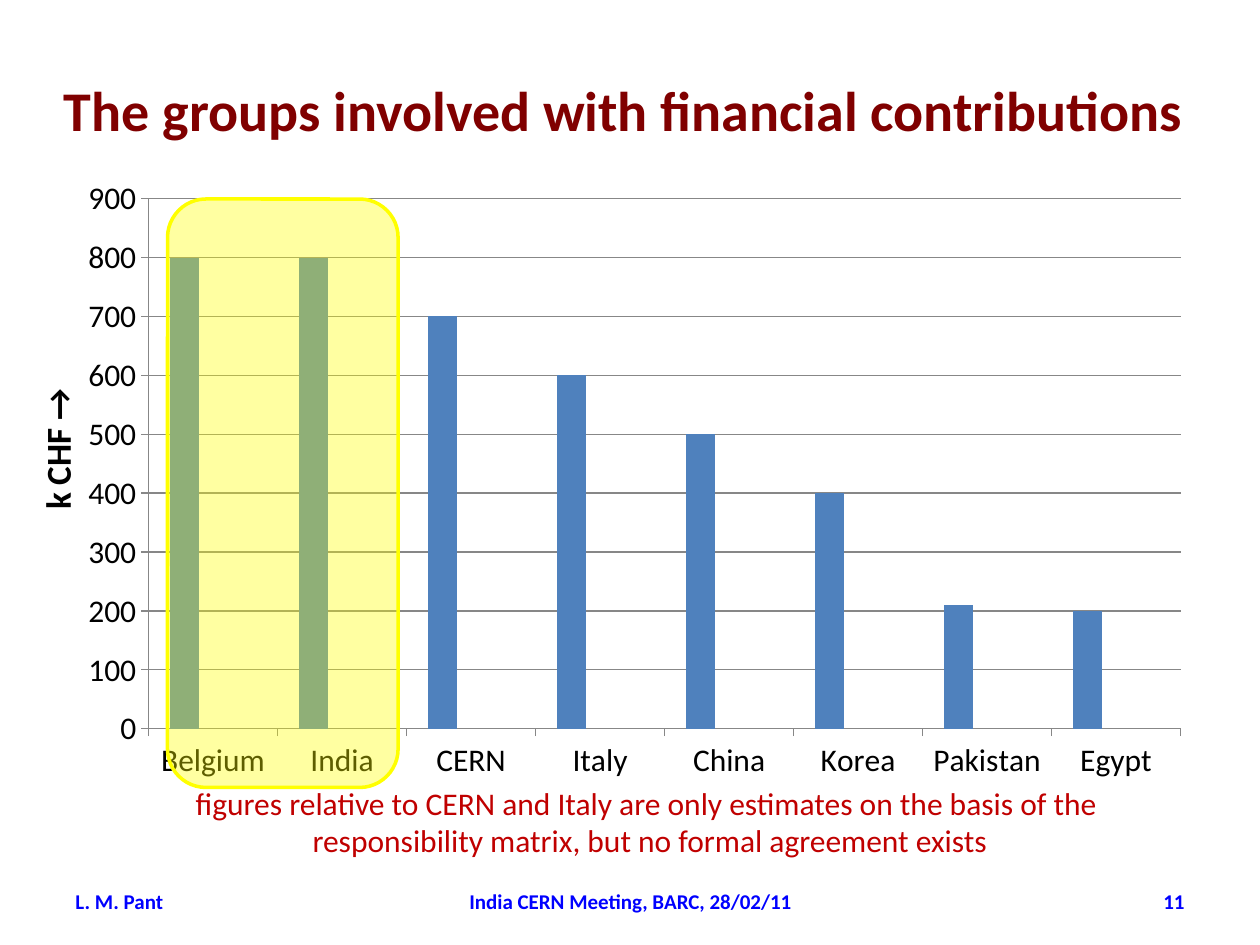
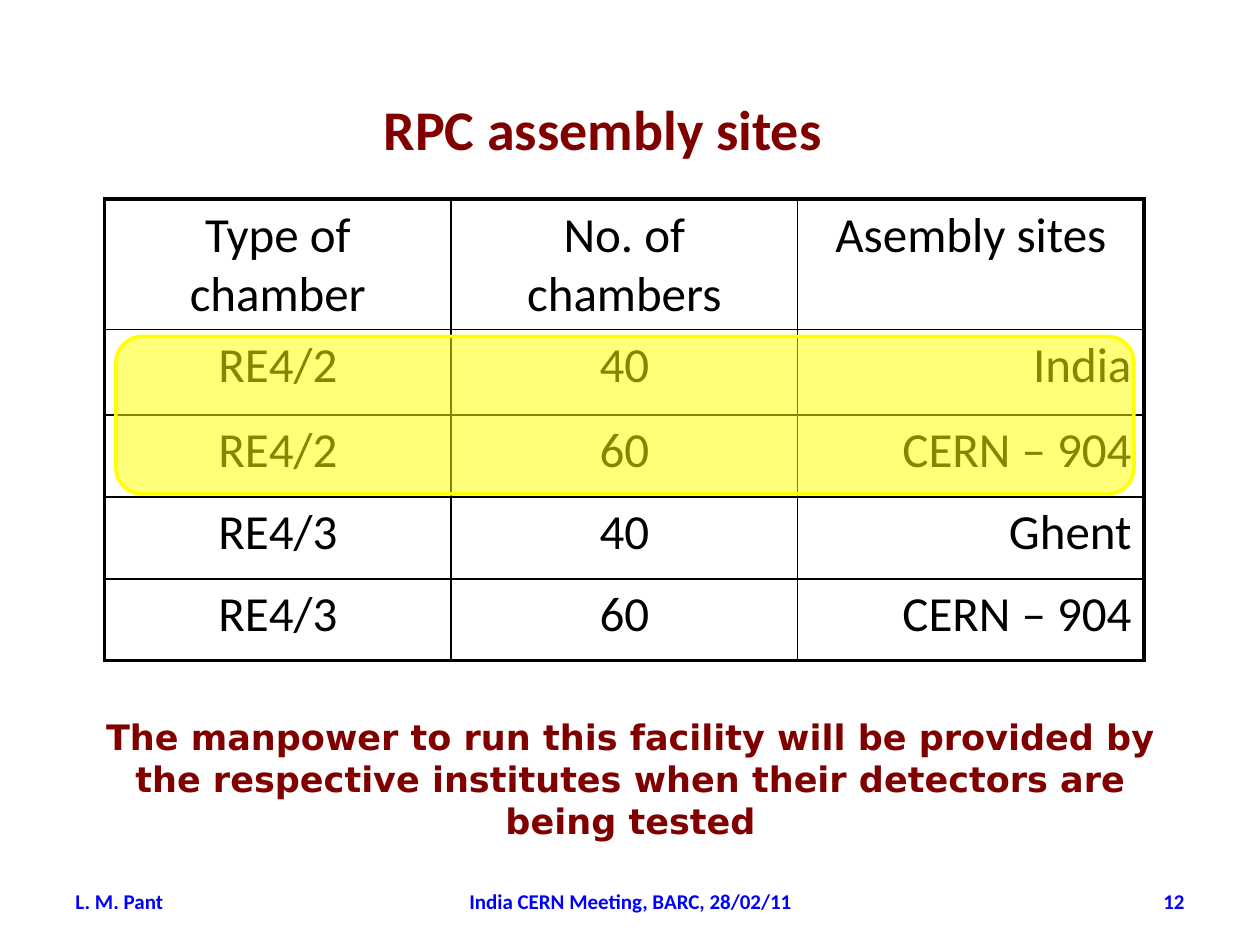
from dataclasses import dataclass

from lxml import etree
from pptx import Presentation
from pptx.chart.data import CategoryChartData
from pptx.dml.color import RGBColor
from pptx.enum.chart import XL_CHART_TYPE, XL_TICK_MARK
from pptx.enum.shapes import MSO_SHAPE
from pptx.enum.text import MSO_ANCHOR, MSO_AUTO_SIZE, PP_ALIGN
from pptx.oxml.ns import qn
from pptx.util import Inches, Pt


@dataclass(frozen=True)
class Theme:
    font: str = "Calibri"
    statement_font: str = "DejaVu Sans"
    ink: str = "000000"
    title: str = "800000"
    caution: str = "C00000"
    footer: str = "0000FF"
    highlight: str = "FFFF00"
    grid: str = "878787"
    series: tuple = ("4F81BD", "C0504D", "9BBB59")
    title_size: float = 32
    table_size: float = 28
    statement_size: float = 20
    body_size: float = 18
    footer_size: float = 12
    thick: float = 2.25
    thin: float = 1


def color(value):
    return RGBColor.from_string(value)


def write(frame, text, *, size, ink, font, bold=False, align=PP_ALIGN.LEFT, before=0):
    for index, line in enumerate(text.split("\n")):
        paragraph = frame.paragraphs[0] if index == 0 else frame.add_paragraph()
        paragraph.alignment = align
        paragraph.space_before = Pt(before)
        run = paragraph.add_run()
        run.text = line
        run.font.size = Pt(size)
        run.font.name = font
        run.font.bold = bold
        run.font.color.rgb = color(ink)


class Deck:
    def __init__(self, theme):
        self.theme = theme
        self.presentation = Presentation()
        self.presentation.slide_width = Inches(10)
        self.presentation.slide_height = Inches(7.5)
        self.slide = None

    def start_slide(self, number):
        self.slide = self.presentation.slides.add_slide(self.presentation.slide_layouts[6])
        footers = (
            (0.5, 2.33, "L. M. Pant", PP_ALIGN.LEFT),
            (3.42, 3.17, "India CERN Meeting, BARC, 28/02/11", PP_ALIGN.CENTER),
            (7.17, 2.33, str(number), PP_ALIGN.RIGHT),
        )
        for left, width, text, align in footers:
            self.text((left, 6.95, width, 0.4), text, grow=False, anchor=MSO_ANCHOR.MIDDLE,
                      size=self.theme.footer_size, ink=self.theme.footer, bold=True, align=align)

    def text(self, box, text, *, wrap=True, grow=True, anchor=MSO_ANCHOR.TOP, rotation=0, **style):
        holder = self.slide.shapes.add_textbox(*map(Inches, box))
        holder.rotation = rotation
        frame = holder.text_frame
        frame.word_wrap = wrap
        frame.auto_size = MSO_AUTO_SIZE.SHAPE_TO_FIT_TEXT if grow else MSO_AUTO_SIZE.NONE
        frame.vertical_anchor = anchor
        write(frame, text, **{"font": self.theme.font, **style})

    def title(self, box, text):
        self.text(box, text, wrap=False, size=self.theme.title_size,
                  ink=self.theme.title, bold=True, align=PP_ALIGN.CENTER)

    def highlight(self, box, opacity):
        marker = self.slide.shapes.add_shape(MSO_SHAPE.ROUNDED_RECTANGLE, *map(Inches, box))
        marker.shadow.inherit = False
        marker.fill.solid()
        marker.fill.fore_color.rgb = color(self.theme.highlight)
        marker.line.color.rgb = color(self.theme.highlight)
        marker.line.width = Pt(2)
        fill_color = marker.fill._xPr.find(qn("a:solidFill"))[0]
        etree.SubElement(fill_color, qn("a:alpha"), val=str(opacity * 1000))

    def column_chart(self, box, categories, series, plot):
        data = CategoryChartData()
        data.categories = categories
        for name, values in series:
            data.add_series(name, values)
        chart = self.slide.shapes.add_chart(
            XL_CHART_TYPE.COLUMN_CLUSTERED, *map(Inches, box), data).chart
        chart.has_legend = False
        chart.has_title = False
        chart.font.name = self.theme.font
        chart.font.size = Pt(self.theme.body_size)
        chart.font.color.rgb = color(self.theme.ink)
        columns = chart.plots[0]
        columns.vary_by_categories = False
        columns.gap_width = 150
        columns.overlap = 0
        for entry, tint in zip(columns.series, self.theme.series):
            entry.format.fill.solid()
            entry.format.fill.fore_color.rgb = color(tint)
        amounts = chart.value_axis
        amounts.minimum_scale, amounts.maximum_scale, amounts.major_unit = 0, 900, 100
        amounts.has_major_gridlines = True
        chart.category_axis.has_major_gridlines = False
        for axis in (amounts, chart.category_axis):
            axis.major_tick_mark = XL_TICK_MARK.OUTSIDE
            axis.minor_tick_mark = XL_TICK_MARK.NONE
        for rule in (amounts, chart.category_axis, amounts.major_gridlines):
            rule.format.line.color.rgb = color(self.theme.grid)
            rule.format.line.width = Pt(0.75)
        self.place_plot(chart, plot)

    def place_plot(self, chart, plot):
        area = chart._chartSpace.chart.plotArea
        for old in area.findall(qn("c:layout")):
            area.remove(old)
        layout = etree.Element(qn("c:layout"))
        area.insert(0, layout)
        manual = etree.SubElement(layout, qn("c:manualLayout"))
        settings = (("layoutTarget", "inner"), ("xMode", "edge"), ("yMode", "edge"),
                    *zip("xywh", plot))
        for tag, value in settings:
            etree.SubElement(manual, qn(f"c:{tag}"), val=str(value))

    def table(self, box, rows, heights, aligns):
        grid = self.slide.shapes.add_table(len(rows), len(aligns), *map(Inches, box)).table
        grid.first_row = False
        grid.horz_banding = False
        for row, height in zip(grid.rows, heights):
            row.height = Inches(height)
        last_row, last_column = len(rows) - 1, len(aligns) - 1
        for r, values in enumerate(rows):
            for c, value in enumerate(values):
                cell = grid.cell(r, c)
                cell.fill.background()
                align = PP_ALIGN.CENTER if r == 0 else aligns[c]
                write(cell.text_frame, value, size=self.theme.table_size, ink=self.theme.ink,
                      font=self.theme.font, align=align, before=self.theme.table_size * 0.2)
                outer = {"L": c == 0, "R": c == last_column, "T": r == 0, "B": r == last_row}
                self.borders(cell, outer)

    def borders(self, cell, outer):
        properties = cell._tc.get_or_add_tcPr()
        for index, (side, is_outer) in enumerate(outer.items()):
            width = Pt(self.theme.thick if is_outer else self.theme.thin)
            line = etree.Element(qn(f"a:ln{side}"), w=str(width))
            fill = etree.SubElement(line, qn("a:solidFill"))
            etree.SubElement(fill, qn("a:srgbClr"), val=self.theme.ink)
            properties.insert(index, line)


def contributions(deck):
    theme = deck.theme
    groups = ("Belgium", "India", "CERN", "Italy", "China", "Korea", "Pakistan", "Egypt")
    unused = (None,) * len(groups)
    deck.start_slide(11)
    deck.column_chart(
        (0.55, 1.33, 9, 4.95), groups,
        (("Series 1", (800, 800, 700, 600, 500, 400, 210, 200)),
         ("Series 2", unused), ("Series 3", unused)),
        plot=(0.07, 0.05, 0.91, 0.85))
    deck.title((0.37, 0.55, 9.16, 0.64), "The groups involved with financial contributions")
    deck.text((-0.13, 3.34, 1.17, 0.44), "k CHF →", wrap=False, rotation=270,
              size=theme.statement_size, ink=theme.ink, bold=True)
    deck.text((1.33, 6.17, 7.66, 0.71),
              "figures relative to CERN and Italy are only estimates on the basis of the \n"
              "responsibility matrix, but no formal agreement exists",
              size=theme.body_size, ink=theme.caution, align=PP_ALIGN.CENTER)
    deck.highlight((1.33, 1.58, 1.83, 4.67), opacity=37)


def assembly_sites(deck):
    theme = deck.theme
    deck.start_slide(12)
    deck.title((2.93, 0.7, 3.71, 0.64), "RPC assembly sites")
    deck.table(
        (0.83, 1.58, 8.25, 3.65),
        (("Type of chamber", "No. of chambers", "Asembly sites"),
         ("RE4/2", "40", "India"),
         ("RE4/2", "60", "CERN – 904"),
         ("RE4/3", "40", "Ghent"),
         ("RE4/3", "60", "CERN – 904")),
        heights=(1.02, 0.68, 0.65, 0.65, 0.65),
        aligns=(PP_ALIGN.CENTER, PP_ALIGN.CENTER, PP_ALIGN.RIGHT))
    deck.text((0.67, 5.63, 8.67, 1.1),
              "The manpower to run this facility will be provided by the respective "
              "institutes when their detectors are being tested",
              size=theme.statement_size, ink=theme.title, font=theme.statement_font,
              bold=True, align=PP_ALIGN.CENTER)
    deck.highlight((0.92, 2.67, 8.08, 1.25), opacity=52)


def main():
    deck = Deck(Theme())
    contributions(deck)
    assembly_sites(deck)
    deck.presentation.save("out.pptx")


if __name__ == "__main__":
    main()
